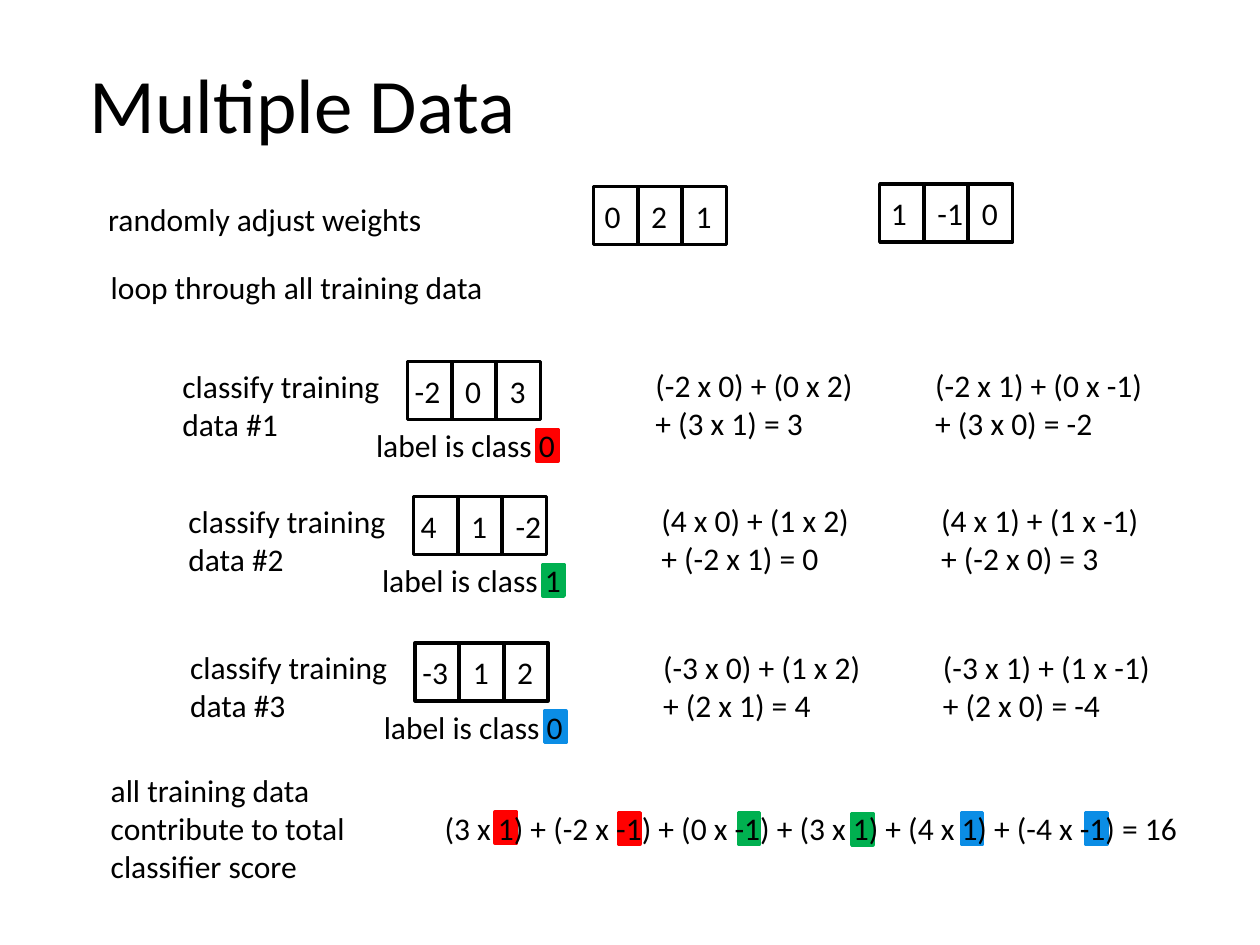
from pptx import Presentation
from pptx.dml.color import RGBColor
from pptx.enum.shapes import MSO_SHAPE
from pptx.enum.text import MSO_ANCHOR, MSO_AUTO_SIZE, PP_ALIGN
from pptx.util import Pt

FONT = "Calibri"
BLACK, RED, GREEN, BLUE = "000000", "FF0000", "00B050", "0B8DE5"
CELL_WIDTH, CELL_HEIGHT, CELL_PITCH = 25.2, 33.1, 25.4
LINE_HEIGHT, TWO_LINES = 29.1, 50.9

# Cell origin, number, feature values, class, class colour, score per weight set
TRAINING_ROWS = [
    (232.8, 206.6, 1, ["-2", "0", "3"], 0, RED,
     ["(-2 x 0) + (0 x 2) + (3 x 1) = 3", "(-2 x 1) + (0 x -1) + (3 x 0) = -2"]),
    (236.2, 283.7, 2, ["4", "1", "-2"], 1, GREEN,
     ["(4 x 0) + (1 x 2) + (-2 x 1) = 0", "(4 x 1) + (1 x -1) + (-2 x 0) = 3"]),
    (237.2, 367.4, 3, ["-3", "1", "2"], 0, BLUE,
     ["(-3 x 0) + (1 x 2) + (2 x 1) = 4", "(-3 x 1) + (1 x -1) + (2 x 0) = -4"]),
]
TOTAL_MARKERS = [
    (283, 463.9, RED), (353.5, 464.4, RED), (422, 464.4, GREEN),
    (486.7, 464.8, GREEN), (549.4, 464.2, BLUE), (620.4, 464.4, BLUE),
]


def color(hex_value):
    return RGBColor.from_string(hex_value)


def write(frame, text, size=18):
    run = frame.paragraphs[0].add_run()
    run.text = text
    run.font.name = FONT
    run.font.size = Pt(size)
    run.font.color.rgb = color(BLACK)


def add_label(shapes, text, left, top, width, height=LINE_HEIGHT, wrap=True):
    frame = shapes.add_textbox(Pt(left), Pt(top), Pt(width), Pt(height)).text_frame
    frame.word_wrap = wrap
    write(frame, text)


def add_rect(shapes, left, top, width, height, line, fill=None):
    rect = shapes.add_shape(MSO_SHAPE.RECTANGLE, Pt(left), Pt(top), Pt(width), Pt(height))
    rect.shadow.inherit = False
    if fill:
        rect.fill.solid()
        rect.fill.fore_color.rgb = color(fill)
    else:
        rect.fill.background()
    rect.line.color.rgb = color(line)
    rect.line.width = Pt(2)


def add_marker(shapes, left, top, hue):
    add_rect(shapes, left, top, 12.2, 18, hue, hue)


def add_vector(shapes, values, left, top, first_shift):
    """Row of outlined cells, each grouped with its number."""
    for index, value in enumerate(values):
        cell = shapes.add_group_shape().shapes
        cell_left = left + index * CELL_PITCH
        shift = 0.5 if index else first_shift
        add_rect(cell, cell_left, top, CELL_WIDTH, CELL_HEIGHT, BLACK)
        number_width = 29.5 if value.startswith("-") else 23.8
        add_label(cell, value, cell_left + shift, top + 2.2, number_width, wrap=False)


def add_title(slide, text):
    title = slide.shapes.title
    title.left, title.top, title.width, title.height = Pt(43.9), Pt(28.8), Pt(260.6), Pt(60.5)
    frame = title.text_frame
    frame.word_wrap = False
    frame.auto_size = MSO_AUTO_SIZE.NONE
    frame.vertical_anchor = MSO_ANCHOR.TOP
    frame.paragraphs[0].alignment = PP_ALIGN.LEFT
    write(frame, text, 44)


def add_training_row(shapes, left, top, number, values, class_id, hue, scores):
    add_marker(shapes, left + 74, top + 38.9, hue)
    add_vector(shapes, values, left, top, -2.9)
    add_label(shapes, f"classify training data #{number}", left - 135.6, top - 0.5, 129.6, TWO_LINES)
    add_label(shapes, f"label is class {class_id}", left - 25, top + 33.4, 135.4)
    for score, shift, width in zip(scores, (134.6, 294.5), (128.2, 137.5)):
        add_label(shapes, score, left + shift, top - 0.7, width, TWO_LINES)


def main():
    deck = Presentation()
    deck.slide_width, deck.slide_height = Pt(720), Pt(540)
    slide = deck.slides.add_slide(deck.slide_layouts[5])
    shapes = slide.shapes
    add_title(slide, "Multiple Data")

    # Weights
    add_label(shapes, "randomly adjust weights", 54.7, 110.9, 203.8)
    add_vector(shapes, ["0", "2", "1"], 339.1, 106.6, -0.7)
    add_vector(shapes, ["1", "-1", "0"], 502.7, 105.1, -0.7)

    # Training loop
    add_label(shapes, "loop through all training data", 56.2, 149.8, 252)
    for row in TRAINING_ROWS:
        add_training_row(shapes, *row)

    # Total score over its coloured class signs
    for marker in TOTAL_MARKERS:
        add_marker(shapes, *marker)
    add_label(shapes, "all training data contribute to total classifier score", 56.2, 437, 165.6, 72.7)
    add_label(shapes, "(3 x 1) + (-2 x -1) + (0 x -1) + (3 x 1) + (4 x 1) + (-4 x -1) = 16",
              247, 458.6, 436.3)

    deck.save("out.pptx")


if __name__ == "__main__":
    main()
